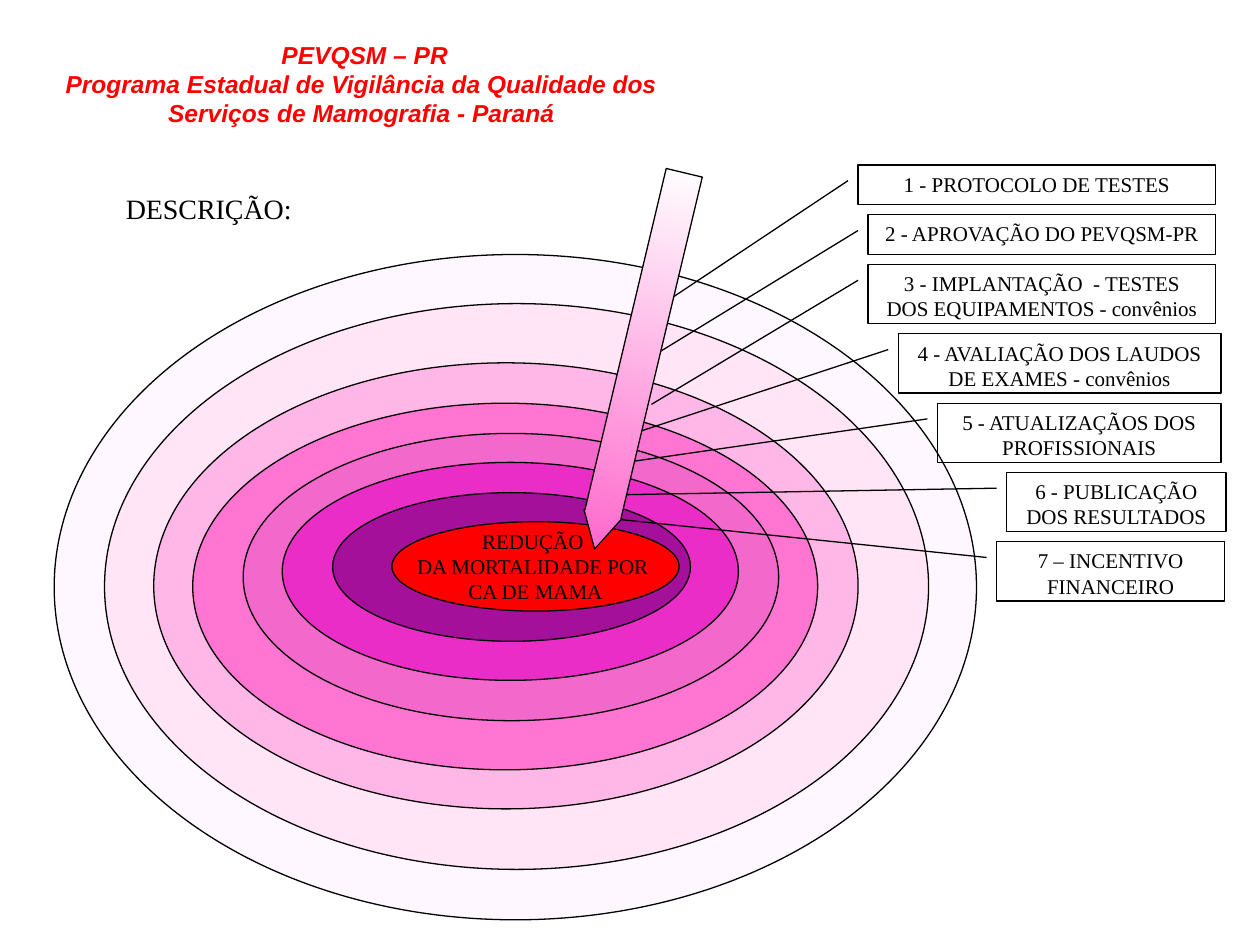
"""Build the mammography quality programme slide: nested ellipses with seven step callouts."""
from dataclasses import dataclass
from typing import Optional

from pptx import Presentation
from pptx import util as u
from pptx.dml.color import RGBColor
from pptx.enum import shapes, text

CELL = 0.1
COLS, ROWS = 100, 75


@dataclass(frozen=True)
class Theme:
    ink: str = "000000"
    alert: str = "FF0000"
    pale: str = "FFFFFF"
    pink: str = "FF66CC"
    serif: str = "Times New Roman"
    sans: str = "Arial"
    small: float = 12
    head: float = 14
    large: float = 16
    rule: float = 0.75


@dataclass(frozen=True)
class Box:
    left: float
    top: float
    width: float
    height: float

    def place(self) -> tuple:
        return tuple(map(grid, (self.left, self.top, self.width, self.height)))


@dataclass(frozen=True)
class Ring:
    box: Box
    fill: str


@dataclass(frozen=True)
class Step:
    label: str
    left: float
    width: float
    lines: int
    tip: tuple[float, float]


THEME = Theme()
RINGS = [
    Ring(Box(4.3, 20.2, 73.2, 52.8), "FFF7FF"),
    Ring(Box(8.3, 24.1, 65.4, 44.9), "FFE5F6"),
    Ring(Box(12.2, 28.8, 55.9, 35.4), "FFB7E7"),
    Ring(Box(15.3, 32, 49.6, 29.1), "FF75D1"),
    Ring(Box(19.3, 34.4, 42.5, 22.8), "F268CB"),
    Ring(Box(22.4, 36.7, 36.2, 17.3), "EB2DC7"),
    Ring(Box(26.4, 39.1, 28.4, 11.8), "A41099"),
    Ring(Box(31.1, 41.4, 22.8, 7.1), THEME.alert),
]
STEPS = [
    Step("1 - PROTOCOLO DE TESTES", 68.1, 28.4, 1, (53.1, 23.8)),
    Step("2 - APROVAÇÃO DO PEVQSM-PR", 68.9, 27.6, 1, (52.4, 27.9)),
    Step("3 - IMPLANTAÇÃO  - TESTES DOS EQUIPAMENTOS - convênios", 68.9, 27.6, 2, (51.7, 32.1)),
    Step("4 - AVALIAÇÃO DOS LAUDOS DE EXAMES - convênios", 71.3, 25.6, 2, (50.6, 34.3)),
    Step("5 - ATUALIZAÇÃOS DOS PROFISSIONAIS", 74.4, 22.5, 2, (48.3, 36.9)),
    Step("6 - PUBLICAÇÃO DOS RESULTADOS", 79.9, 17.4, 2, (47.7, 39.3)),
    Step("7 – INCENTIVO FINANCEIRO", 79.1, 18.1, 2, (46.9, 41)),
]
HEIGHT = {1: 3.15, 2: 4.7}
FIRST, GAP = 13.1, 0.8
INSET, DROP = 0.8, 1.25


def grid(cells: float) -> int:
    """Turn grid cells into a length."""
    return u.Inches(cells * CELL)


def write(frame, words: str, size: float, face: str = THEME.serif, ink: str = THEME.ink,
          align=text.PP_ALIGN.CENTER, strong: bool = False) -> None:
    """Fill a text frame with evenly styled paragraphs."""
    frame.text = words
    for para in frame.paragraphs:
        para.alignment = align
        font = para.font
        font.name, font.size = face, u.Pt(size)
        font.bold = font.italic = strong
        font.color.rgb = RGBColor.from_string(ink)


def draw(slide, kind, box: Box, fill: Optional[str] = None):
    """Add an outlined preset shape."""
    shape = slide.shapes.add_shape(kind, *box.place())
    shape.shadow.inherit = False
    shape.line.color.rgb = RGBColor.from_string(THEME.ink)
    shape.line.width = u.Pt(THEME.rule)
    if fill:
        shape.fill.solid()
        shape.fill.fore_color.rgb = RGBColor.from_string(fill)
    else:
        shape.fill.background()
    return shape


def add_step(slide, step: Step, top: float) -> None:
    """Add a callout whose leader ends at the step's tip."""
    high = HEIGHT[step.lines]
    shape = draw(slide, shapes.MSO_SHAPE.LINE_CALLOUT_1, Box(step.left, top, step.width, high))
    across, down = step.tip
    leader = (DROP / high, -INSET / step.width,
              (down - top) / high, (across - step.left) / step.width)
    for index, share in enumerate(leader):
        shape.adjustments[index] = share
    shape.text_frame.vertical_anchor = text.MSO_ANCHOR.TOP
    write(shape.text_frame, step.label, THEME.small)


def add_arrow(slide) -> None:
    """Add the tilted arrow that points at the goal."""
    arrow = draw(slide, shapes.MSO_SHAPE.DOWN_ARROW, Box(49.2, 13.3, 3.1, 30.7))
    arrow.rotation = 13.4
    arrow.adjustments[0], arrow.adjustments[1] = 0.95, 0.92
    arrow.fill.gradient()
    arrow.fill.gradient_angle = 270
    for stop, tone in zip(arrow.fill.gradient_stops, (THEME.pale, THEME.pink)):
        stop.color.rgb = RGBColor.from_string(tone)


def add_title(slide) -> None:
    """Place and style the title."""
    title = slide.shapes.title
    title.left, title.top, title.width, title.height = Box(1.2, 2.1, 55.5, 9.1).place()
    frame = title.text_frame
    frame.auto_size = text.MSO_AUTO_SIZE.NONE
    frame.vertical_anchor = text.MSO_ANCHOR.MIDDLE
    write(frame, "PEVQSM – PR\vPrograma Estadual de Vigilância da Qualidade dos \v"
          "Serviços de Mamografia - Paraná ", THEME.head, THEME.sans, THEME.alert, strong=True)


def main() -> None:
    """Build and save the slide."""
    deck = Presentation()
    deck.slide_width, deck.slide_height = grid(COLS), grid(ROWS)
    slide = deck.slides.add_slide(deck.slide_layouts[5])
    add_title(slide)

    for ring in RINGS:
        core = draw(slide, shapes.MSO_SHAPE.OVAL, ring.box, ring.fill)
    core.text_frame.word_wrap = False
    core.text_frame.vertical_anchor = text.MSO_ANCHOR.MIDDLE
    write(core.text_frame, "REDUÇÃO \nDA MORTALIDADE POR \nCA DE MAMA", THEME.small)

    top = FIRST
    for step in STEPS:
        add_step(slide, step, top)
        top += HEIGHT[step.lines] + GAP
    add_arrow(slide)

    label = slide.shapes.add_textbox(*Box(9, 14.7, 38.6, 3.7).place())
    label.text_frame.word_wrap = True
    write(label.text_frame, "DESCRIÇÃO:", THEME.large, align=text.PP_ALIGN.LEFT)
    deck.save("out.pptx")


if __name__ == "__main__":
    main()
